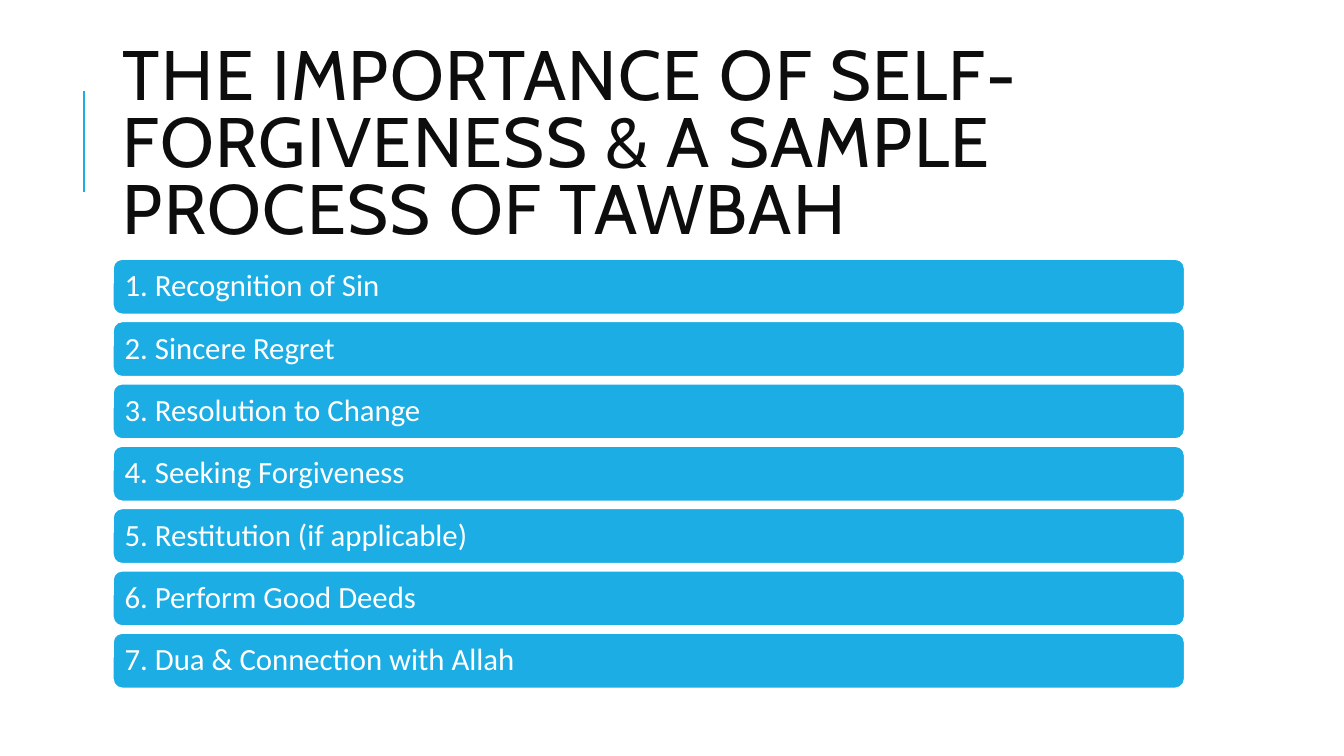
import pptx
import pptx.dml.color
import pptx.enum.shapes
import pptx.enum.text
import pptx.oxml
import pptx.util

COLORS = {"accent": "1CADE4", "title": "0D0D0D", "white": "FFFFFF"}
SLIDE_W, SLIDE_H = 13.33, 7.5
LEFT, WIDTH = 1.12, 10.63
TITLE = "THE IMPORTANCE OF SELF-FORGIVENESS & A SAMPLE PROCESS OF TAWBAH"
STEPS = [
    "1. Recognition of Sin",
    "2. Sincere Regret",
    "3. Resolution to Change",
    "4. Seeking Forgiveness",
    "5. Restitution (if applicable)",
    "6. Perform Good Deeds",
    "7. Dua & Connection with Allah",
]


def inches(*lengths):
    return [pptx.util.Inches(v) for v in lengths]


def color(name):
    return pptx.dml.color.RGBColor.from_string(COLORS[name])


def write(sp, text, font, size, color_name, spacing):
    """Fill a shape with one left-aligned, vertically centred paragraph."""
    tf = sp.text_frame
    tf.word_wrap = True
    tf.vertical_anchor = pptx.enum.text.MSO_ANCHOR.MIDDLE
    p = tf.paragraphs[0]
    p.alignment = pptx.enum.text.PP_ALIGN.LEFT
    p.line_spacing = spacing
    r = p.add_run()
    r.text = text
    r.font.name = font
    r.font.size = pptx.util.Pt(size)
    r.font.color.rgb = color(color_name)
    return r


def add_accent_line(slide, x, top, height):
    line = slide.shapes.add_connector(
        pptx.enum.shapes.MSO_CONNECTOR.STRAIGHT, *inches(x, top + height, x, top))
    line.line.color.rgb = color("accent")
    line.line.width = pptx.util.Pt(1.5)
    line._element.spPr.append(pptx.oxml.parse_xml(
        '<a:effectLst xmlns:a="http://schemas.openxmlformats.org/drawingml/2006/main"/>'))


def add_title(slide, left, top, width, height):
    sp = slide.shapes.add_textbox(*inches(left, top, width, height))
    r = write(sp, TITLE, "Cabin", 50, "title", 0.8)
    r._r.get_or_add_rPr().set("spc", "100")


def add_steps(slide, left, top, width, height):
    """Stack one bar per step; the gap between bars is an eighth of a bar."""
    bar = height / (len(STEPS) + (len(STEPS) - 1) / 8)
    for i, step in enumerate(STEPS):
        sp = slide.shapes.add_shape(
            pptx.enum.shapes.MSO_SHAPE.ROUNDED_RECTANGLE,
            *inches(left, top + i * bar * 9 / 8, width, bar))
        sp.shadow.inherit = False
        sp.fill.solid()
        sp.fill.fore_color.rgb = color("accent")
        sp.line.color.rgb = color("white")
        sp.line.width = pptx.util.Pt(1.25)
        tf = sp.text_frame
        tf.margin_left = tf.margin_right = pptx.util.Inches(0.09)
        tf.margin_top = tf.margin_bottom = pptx.util.Inches(0.09)
        write(sp, step, "Calibri", 22, "white", 0.9)


def main():
    prs = pptx.Presentation()
    prs.slide_width, prs.slide_height = inches(SLIDE_W, SLIDE_H)
    slide = prs.slides.add_slide(prs.slide_layouts[6])
    add_accent_line(slide, SLIDE_W / 16, SLIDE_H * 0.12, 1)
    add_title(slide, LEFT, 0.64, WIDTH, 1.64)
    add_steps(slide, LEFT, 2.57, WIDTH, 4.26)
    prs.save("out.pptx")


if __name__ == "__main__":
    main()
